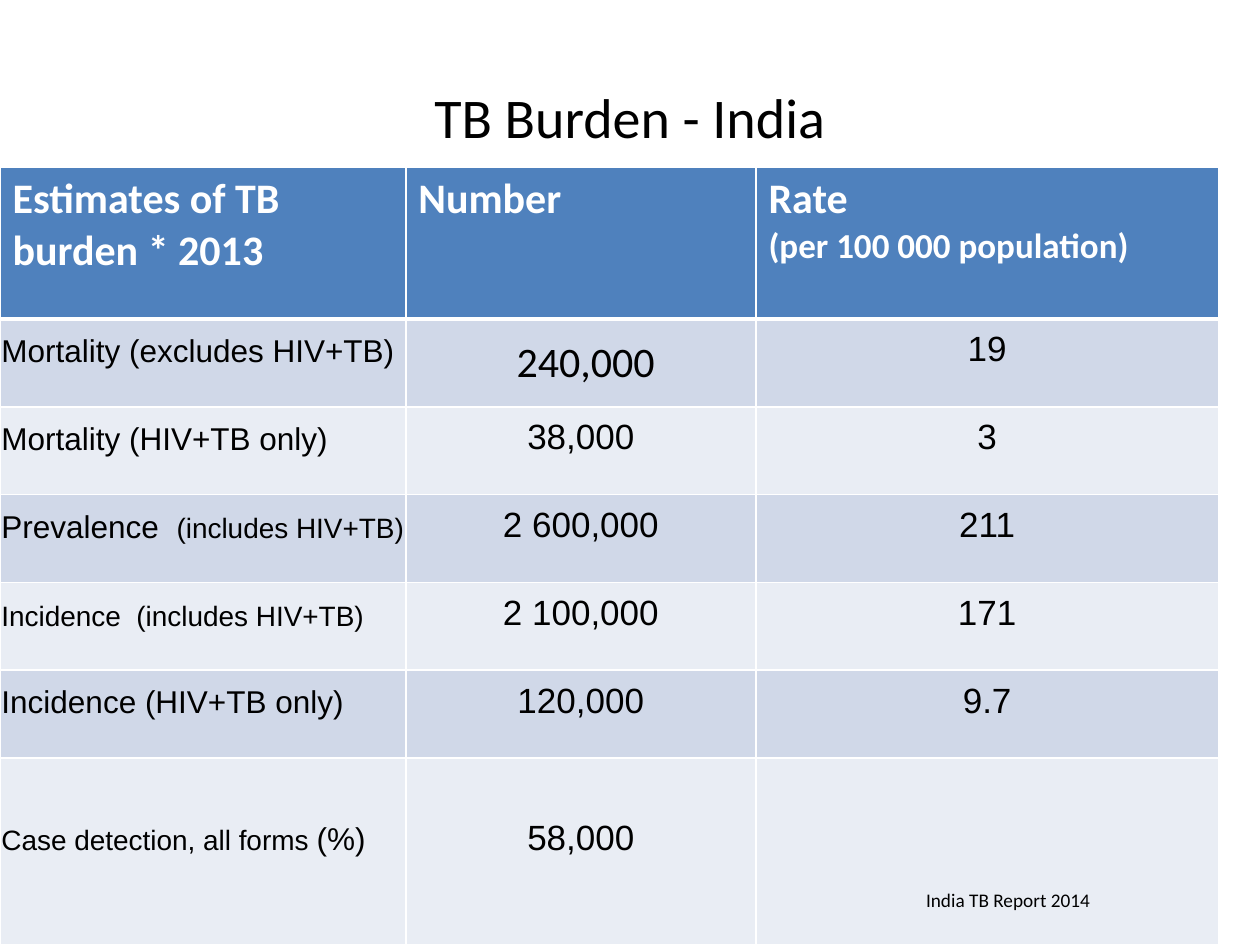
import pptx
import pptx.util
import pptx.dml.color
import pptx.enum.text
import pptx.oxml
import pptx.oxml.ns

Cm, Pt = pptx.util.Cm, pptx.util.Pt
ALIGN = pptx.enum.text.PP_ALIGN
ANCHOR = pptx.enum.text.MSO_ANCHOR

# Content: each cell is a list of lines, each line a list of (text, size) spans
TITLE = "TB Burden - India"
HEADER = [
    [[("Estimates of TB burden * 2013", 24)]],
    [[("Number", 24)]],
    [[("Rate", 24)], [("(per 100 000 population)", 20)]],
]
ROWS = [
    ([("Mortality (excludes HIV+TB)", 18)], " 240,000", "19"),
    ([("Mortality (HIV+TB only)", 18)], "38,000", "3"),
    ([("Prevalence  ", 18), ("(includes HIV+TB)", 16)], "2 600,000", "211"),
    ([("Incidence  (includes HIV+TB)", 16)], "2 100,000", "171"),
    ([("Incidence (HIV+TB only)", 18)], "120,000", "9.7"),
    ([("Case detection, all forms ", 16), ("(%)", 18)], "58,000", None),
]
SOURCE = "India TB Report 2014"

COLORS = {"header": "4F81BD", "odd": "D0D8E8", "even": "E9EDF4",
          "line": "FFFFFF", "light": "FFFFFF", "dark": "000000"}
COLUMN_WIDTHS = [8.18, 7.06, 9.32]
ROW_HEIGHTS = [3.05] + [1.77] * 5 + [3.76]
TABLE_TOP = 3.38
THIN_MARGINS = {"margin_left": Cm(0.03), "margin_right": Cm(0.03),
                "margin_top": 0, "margin_bottom": 0,
                "vertical_anchor": ANCHOR.MIDDLE}
SOURCE_MARGINS = {"margin_left": Cm(1.1), "margin_bottom": Cm(0.65),
                  "vertical_anchor": ANCHOR.BOTTOM}


def set_all(target, values):
    for name, value in values.items():
        setattr(target, name, value)


def color(name):
    return pptx.dml.color.RGBColor.from_string(COLORS[name])


def write_line(para, spans, font, ink, bold=False):
    for text, size in spans:
        span = para.add_run()
        span.text = text
        set_all(span.font, {"name": font, "size": Pt(size), "bold": bold})
        span.font.color.rgb = color(ink)


def style_cell(cell, fill, bottom=1):
    cell.fill.solid()
    cell.fill.fore_color.rgb = color(fill)
    properties = cell._tc.get_or_add_tcPr()
    widths = {"lnL": 1, "lnR": 1, "lnT": 1, "lnB": bottom}
    for index, (side, width) in enumerate(widths.items()):
        properties.insert(index, pptx.oxml.parse_xml(
            f'<a:{side} {pptx.oxml.ns.nsdecls("a")} w="{Pt(width)}"><a:solidFill>'
            f'<a:srgbClr val="{COLORS["line"]}"/></a:solidFill></a:{side}>'))


def fill_header(table):
    for column, lines in enumerate(HEADER):
        cell = table.cell(0, column)
        style_cell(cell, "header", bottom=3)
        para = cell.text_frame.paragraphs[0]
        for number, spans in enumerate(lines):
            if number:
                para.add_line_break()
            write_line(para, spans, "Calibri", "light", bold=True)


def fill_body(table):
    for row, (label, number, rate) in enumerate(ROWS, start=1):
        for column, content in enumerate((label, number, rate)):
            cell = table.cell(row, column)
            style_cell(cell, "odd" if row % 2 else "even")
            para = cell.text_frame.paragraphs[0]
            para.alignment = ALIGN.CENTER if column else ALIGN.LEFT
            if content is None:
                set_all(cell, SOURCE_MARGINS)
                write_line(para, [(SOURCE, 11)], "Calibri", "dark")
                continue
            set_all(cell, THIN_MARGINS)
            if (row, column) == (1, 1):  # the one larger figure
                write_line(para, [(content, 24)], "Calibri", "dark")
                continue
            para.line_spacing = Pt(7.2)
            spans = [(content, 20)] if column else content
            write_line(para, spans, "Arial", "dark")


def main():
    deck = pptx.Presentation()
    set_all(deck, {"slide_width": Cm(25.4), "slide_height": Cm(19.05)})
    page = deck.slides.add_slide(deck.slide_layouts[5])

    # Title
    title = page.shapes.title
    set_all(title, {"left": Cm(1.27), "top": Cm(0.76),
                    "width": Cm(22.86), "height": Cm(3.18)})
    title.text_frame.vertical_anchor = ANCHOR.MIDDLE
    para = title.text_frame.paragraphs[0]
    para.alignment = ALIGN.CENTER
    write_line(para, [(TITLE, 32)], "Calibri", "dark")

    # Burden table
    table = page.shapes.add_table(
        len(ROW_HEIGHTS), len(COLUMN_WIDTHS), 0, Cm(TABLE_TOP),
        Cm(sum(COLUMN_WIDTHS)), Cm(sum(ROW_HEIGHTS))).table
    table.horz_banding = False
    for column, width in zip(table.columns, COLUMN_WIDTHS):
        column.width = Cm(width)
    for row, height in zip(table.rows, ROW_HEIGHTS):
        row.height = Cm(height)
    fill_header(table)
    fill_body(table)

    deck.save("out.pptx")


if __name__ == "__main__":
    main()
